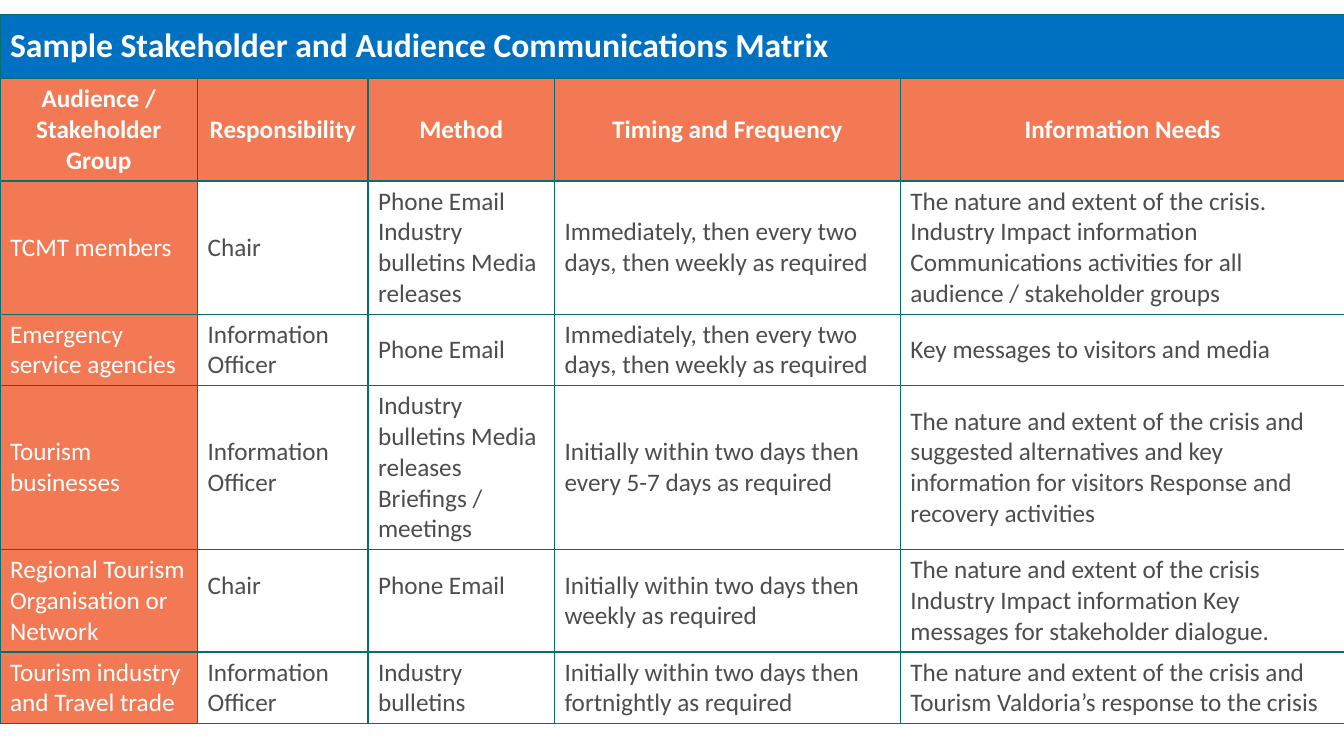
from lxml import etree
from pptx import Presentation
from pptx.dml.color import RGBColor
from pptx.enum.text import MSO_ANCHOR, PP_ALIGN
from pptx.oxml.ns import qn
from pptx.util import Inches, Pt

MIDDLE = MSO_ANCHOR.MIDDLE
LEFT, CENTER = PP_ALIGN.LEFT, PP_ALIGN.CENTER

WHITE = RGBColor(0xFF, 0xFF, 0xFF)
GREY = RGBColor(0x4D, 0x4D, 0x4D)
BLUE = RGBColor(0x00, 0x70, 0xC0)
ORANGE = RGBColor(0xF2, 0x79, 0x54)
TEAL = RGBColor(0x08, 0x6D, 0x6E)

TITLE = "Sample Stakeholder and Audience Communications Matrix"
HEADERS = ["Audience / Stakeholder Group", "Responsibility", "Method",
           "Timing and Frequency", "Information Needs"]
AUDIENCES = [
    ["TCMT members", "Chair", "Phone Email Industry bulletins Media releases",
     "Immediately, then every two days, then weekly as required",
     "The nature and extent of the crisis. Industry Impact information "
     "Communications activities for all audience / stakeholder groups"],
    ["Emergency service agencies", "Information Officer", "Phone Email",
     "Immediately, then every two days, then weekly as required",
     "Key messages to visitors and media"],
    ["Tourism businesses", "Information Officer",
     "Industry bulletins Media releases Briefings / meetings",
     "Initially within two days then every 5-7 days as required",
     "The nature and extent of the crisis and suggested alternatives and key "
     "information for visitors Response and recovery activities"],
    ["Regional Tourism Organisation or Network", "Chair", "Phone Email",
     "Initially within two days then weekly as required",
     "The nature and extent of the crisis Industry Impact information Key "
     "messages for stakeholder dialogue."],
    ["Tourism industry and Travel trade", "Information Officer", "Industry bulletins",
     "Initially within two days then fortnightly as required",
     "The nature and extent of the crisis and Tourism Valdoria’s response to the crisis"],
]
COLUMN_WIDTHS = [1.96, 1.69, 1.85, 3.43, 4.41]
ROW_HEIGHT = 0.64
REGIONAL_ROW = 5
RAISED_COLUMNS = (1, 2)


class MatrixSlide:
    font_name = "Calibri"
    border_width = Pt(1)

    def __init__(self, presentation):
        self.slide = presentation.slides.add_slide(presentation.slide_layouts[6])

    def add_table(self, row_count, column_widths, left, top, width, height):
        shape = self.slide.shapes.add_table(
            row_count, len(column_widths),
            Inches(left), Inches(top), Inches(width), Inches(height))
        table = shape.table
        table.horz_banding = False
        for column, column_width in zip(table.columns, column_widths):
            column.width = Inches(column_width)
        for row in table.rows:
            row.height = Inches(ROW_HEIGHT)
        shape.height = Inches(height)
        return table

    def add_borders(self, cell):
        properties = cell._tc.get_or_add_tcPr()
        for position, side in enumerate(("a:lnL", "a:lnR", "a:lnT", "a:lnB")):
            line = etree.Element(qn(side), w=str(self.border_width))
            fill = etree.SubElement(line, qn("a:solidFill"))
            etree.SubElement(fill, qn("a:srgbClr"), val=str(TEAL))
            properties.insert(position, line)

    def fill_cell(self, cell, text, fill, color, size=18, bold=False, alignment=LEFT):
        cell.text = text
        cell.vertical_anchor = MIDDLE
        cell.fill.solid()
        cell.fill.fore_color.rgb = fill
        paragraph = cell.text_frame.paragraphs[0]
        paragraph.alignment = alignment
        paragraph.font.name = self.font_name
        paragraph.font.size = Pt(size)
        paragraph.font.bold = bold
        paragraph.font.color.rgb = color
        self.add_borders(cell)


def main():
    presentation = Presentation()
    presentation.slide_width = Inches(13.33)
    presentation.slide_height = Inches(7.5)
    matrix = MatrixSlide(presentation)
    table = matrix.add_table(len(AUDIENCES) + 2, COLUMN_WIDTHS, 0, 0.14, 13.33, 6.94)

    title_cell = table.cell(0, 0)
    title_cell.merge(table.cell(0, len(HEADERS) - 1))
    matrix.fill_cell(title_cell, TITLE, BLUE, WHITE, size=24, bold=True)
    for cell in list(table.rows[0].cells)[1:]:
        matrix.add_borders(cell)

    for column, header in enumerate(HEADERS):
        matrix.fill_cell(table.cell(1, column), header, ORANGE, WHITE,
                         bold=True, alignment=CENTER)

    for row, audience in enumerate(AUDIENCES, start=2):
        for column, text in enumerate(audience):
            fill, color = (WHITE, GREY) if column else (ORANGE, WHITE)
            matrix.fill_cell(table.cell(row, column), text, fill, color)

    for column in RAISED_COLUMNS:
        table.cell(REGIONAL_ROW, column).margin_bottom = Inches(0.35)

    presentation.save("out.pptx")


if __name__ == "__main__":
    main()
